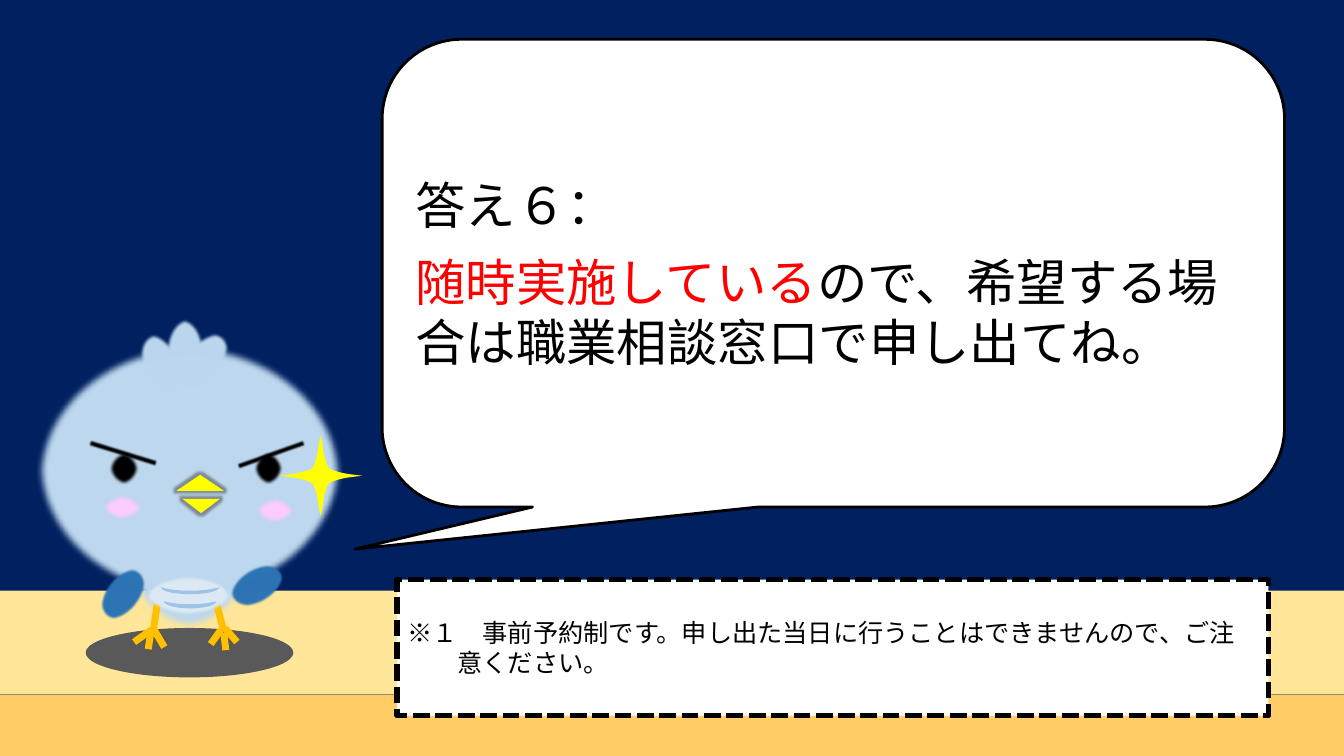
from pptx import Presentation
from pptx.dml.color import RGBColor
from pptx.enum.dml import MSO_LINE
from pptx.enum.shapes import MSO_CONNECTOR, MSO_SHAPE as SHAPE
from pptx.enum.text import MSO_ANCHOR, PP_ALIGN
from pptx.oxml import parse_xml
from pptx.oxml.ns import nsdecls
from pptx.util import Inches, Pt

FONT = "Noto Sans CJK JP"
BLACK, WHITE, RED = "000000", "FFFFFF", "FF0000"
PALE, WING, STRIPE, BELLY = "BDD7EE", "2E75B6", "9DC3E6", "DEEBF7"
YELLOW, LEG, PINK, GREY = "FFFF00", "FFC000", "FFCCFF", "7F8A96"


def rgb(value):
    return RGBColor.from_string(value)


def set_effect(s, inner=""):
    """Give a shape or connector an effect list; an empty one removes the shadow."""
    spPr = s._element.spPr
    for old in spPr.findall("{*}effectLst"):
        spPr.remove(old)
    spPr.append(parse_xml(f"<a:effectLst {nsdecls('a')}>{inner}</a:effectLst>"))


def soften(s, radius):
    set_effect(s, f'<a:softEdge rad="{Inches(radius)}"/>')


def glow(s, radius, color):
    set_effect(s, f'<a:glow rad="{Inches(radius)}"><a:srgbClr val="{color}"/></a:glow>')


def paint(s, fill, line=None, width=1):
    s.shadow.inherit = False
    s.fill.solid()
    s.fill.fore_color.rgb = rgb(fill)
    if line:
        s.line.color.rgb = rgb(line)
        s.line.width = Pt(width)
    else:
        s.line.fill.background()
    return s


def add_figure(shapes, kind, box, fill, line=None, width=1, rot=0, adj=()):
    s = shapes.add_shape(kind, *map(Inches, box))
    s.rotation = rot
    for i, value in enumerate(adj):
        s.adjustments[i] = value
    return paint(s, fill, line, width)


def add_ellipse(shapes, box, fill, rot=0):
    return add_figure(shapes, SHAPE.OVAL, box, fill, rot=rot)


def add_leg_line(shapes, *ends):
    c = shapes.add_connector(MSO_CONNECTOR.STRAIGHT, *map(Inches, ends))
    c.line.color.rgb = rgb(LEG)
    c.line.width = Pt(5)
    set_effect(c)


def add_paragraph(p, runs, size, spacing, before=0):
    p.alignment = PP_ALIGN.LEFT
    p.line_spacing = Pt(spacing)
    p.space_before = Pt(before)
    for text, color in runs:
        r = p.add_run()
        r.text = text
        r.font.size = Pt(size)
        r.font.name = FONT
        r.font.color.rgb = rgb(color)
        r._r.get_or_add_rPr().append(parse_xml(f'<a:ea {nsdecls("a")} typeface="{FONT}"/>'))


def prepare_text(s):
    tf = s.text_frame
    tf.word_wrap = True
    tf.vertical_anchor = MSO_ANCHOR.MIDDLE
    return tf


def add_bird(shapes):
    bird = shapes.add_group_shape().shapes

    # Body and head
    soften(add_ellipse(bird, (1.26, 5.03, 1.22, 1.23), PALE), 0.07)
    soften(add_ellipse(bird, (0.35, 3.4, 3.06, 2.54), PALE), 0.07)

    # Legs with three toes each
    for ends in [(1.56, 5.99, 1.52, 6.26), (1.5, 6.25, 1.33, 6.37),
                 (1.5, 6.25, 1.47, 6.44), (1.53, 6.25, 1.63, 6.42),
                 (2.15, 6, 2.22, 6.26), (2.19, 6.25, 2.09, 6.39),
                 (2.22, 6.28, 2.24, 6.45), (2.23, 6.23, 2.35, 6.37)]:
        add_leg_line(bird, *ends)

    # Belly and its stripes
    soften(add_ellipse(bird, (1.44, 5.71, 0.86, 0.4), BELLY), 0.03)
    for box, bend in [((1.85, 5.74, 0.07, 0.52), 0.58), ((1.85, 5.57, 0.07, 0.58), 0.49)]:
        add_figure(bird, SHAPE.MOON, box, STRIPE, rot=270, adj=[bend])

    # Crest and wings
    for left, top, rot in [(1.41, 3.29, 335.8), (1.64, 3.16, 0), (1.83, 3.26, 39.6)]:
        soften(add_ellipse(bird, (left, top, 0.39, 0.63), PALE, rot), 0.03)
    for left, top, rot in [(1.04, 5.61, 34.5), (2.37, 5.52, 241.2)]:
        soften(add_ellipse(bird, (left, top, 0.36, 0.57), WING, rot), 0.02)

    # Beak
    for box, rot in [((1.75, 4.71, 0.47, 0.16), 0), ((1.81, 4.95, 0.37, 0.14), 180)]:
        glow(add_figure(bird, SHAPE.ISOSCELES_TRIANGLE, box, YELLOW, rot=rot), 0.05, GREY)

    # Cheeks
    for left, top in [(2.52, 4.93), (1.01, 4.9)]:
        soften(add_ellipse(bird, (left, top, 0.41, 0.27), PINK), 0.04)


def add_eyes(shapes):
    for left in (1.08, 2.51):
        soften(add_ellipse(shapes, (left, 4.48, 0.3, 0.34), BLACK), 0.03)
    for left, top, rot in [(0.86, 4.45, 16.6), (2.33, 4.46, 340.6)]:
        brow = add_figure(shapes, SHAPE.RECTANGLE, (left, top, 0.72, 0.09),
                          BLACK, BLACK, rot=rot)
        soften(brow, 0.02)


def curve(p0, p1, p2, p3, steps=8):
    """Points along a cubic Bezier curve, without its start."""
    for t in (i / steps for i in range(1, steps + 1)):
        u = 1 - t
        yield tuple(u**3 * a + 3 * u * u * t * b + 3 * u * t * t * c + t**3 * d
                    for a, b, c, d in zip(p0, p1, p2, p3))


def add_sparkle(shapes):
    cx, cy, rx, ry = 3.18, 4.72, 0.41, 0.4
    # One quarter as two curves, mirrored round the centre
    waist = (0.2, 0.18)
    quarter = [(1, 0), *curve((1, 0), (0.73, 0.04), (0.51, 0.04), waist),
               *curve(waist, (0.05, 0.47), (0.07, 0.73), (0, 1))]
    points = []
    for sx, sy, order in [(1, 1, 1), (-1, 1, -1), (-1, -1, 1), (1, -1, -1)]:
        points += [(Inches(cx + sx * rx * x), Inches(cy + sy * ry * y))
                   for x, y in quarter[::order]]
    builder = shapes.build_freeform(*points[0])
    builder.add_line_segments(points[1:], close=True)
    paint(builder.convert_to_shape(), "FFFF01")


def add_answer(shapes):
    s = add_figure(shapes, SHAPE.ROUNDED_RECTANGULAR_CALLOUT, (3.79, 0.39, 8.95, 4.64),
                   WHITE, BLACK, 2, adj=[-0.53, 0.59, 0.17])
    tf = prepare_text(s)
    add_paragraph(tf.paragraphs[0], [("答え６：", BLACK)], 36, 43)
    add_paragraph(tf.add_paragraph(),
                  [("随時実施している", RED),
                   ("ので、希望する場合は職業相談窓口で申し出てね。", BLACK)], 36, 43, 12)


def add_note(shapes):
    s = add_figure(shapes, SHAPE.RECTANGLE, (3.94, 5.75, 8.64, 1.35), WHITE, BLACK, 4)
    s.line.dash_style = MSO_LINE.SQUARE_DOT
    tf = prepare_text(s)
    tf.margin_right = Inches(0.2)
    p = tf.paragraphs[0]
    add_paragraph(p, [("※１　事前予約制です。申し出た当日に行うことはできませんので、"
                       "ご注意ください。", BLACK)], 18, 21.5)
    # Hanging indent
    pPr = p._p.get_or_add_pPr()
    pPr.set("marL", str(Inches(0.5)))
    pPr.set("indent", str(-Inches(0.5)))


def main():
    prs = Presentation()
    prs.slide_width, prs.slide_height = Inches(13.33), Inches(7.5)
    slide = prs.slides.add_slide(prs.slide_layouts[6])
    slide.background.fill.solid()
    slide.background.fill.fore_color.rgb = rgb("002060")
    shapes = slide.shapes

    # Floor and the bird's shadow
    add_figure(shapes, SHAPE.RECTANGLE, (0, 5.86, 13.33, 1.03), "FFE699")
    add_figure(shapes, SHAPE.RECTANGLE, (0, 6.89, 13.33, 0.61), "FFCC66")
    add_ellipse(shapes, (0.85, 6.23, 2.06, 0.49), "595959")

    add_bird(shapes)
    add_answer(shapes)
    add_note(shapes)
    add_eyes(shapes)
    add_sparkle(shapes)
    prs.save("out.pptx")


if __name__ == "__main__":
    main()
